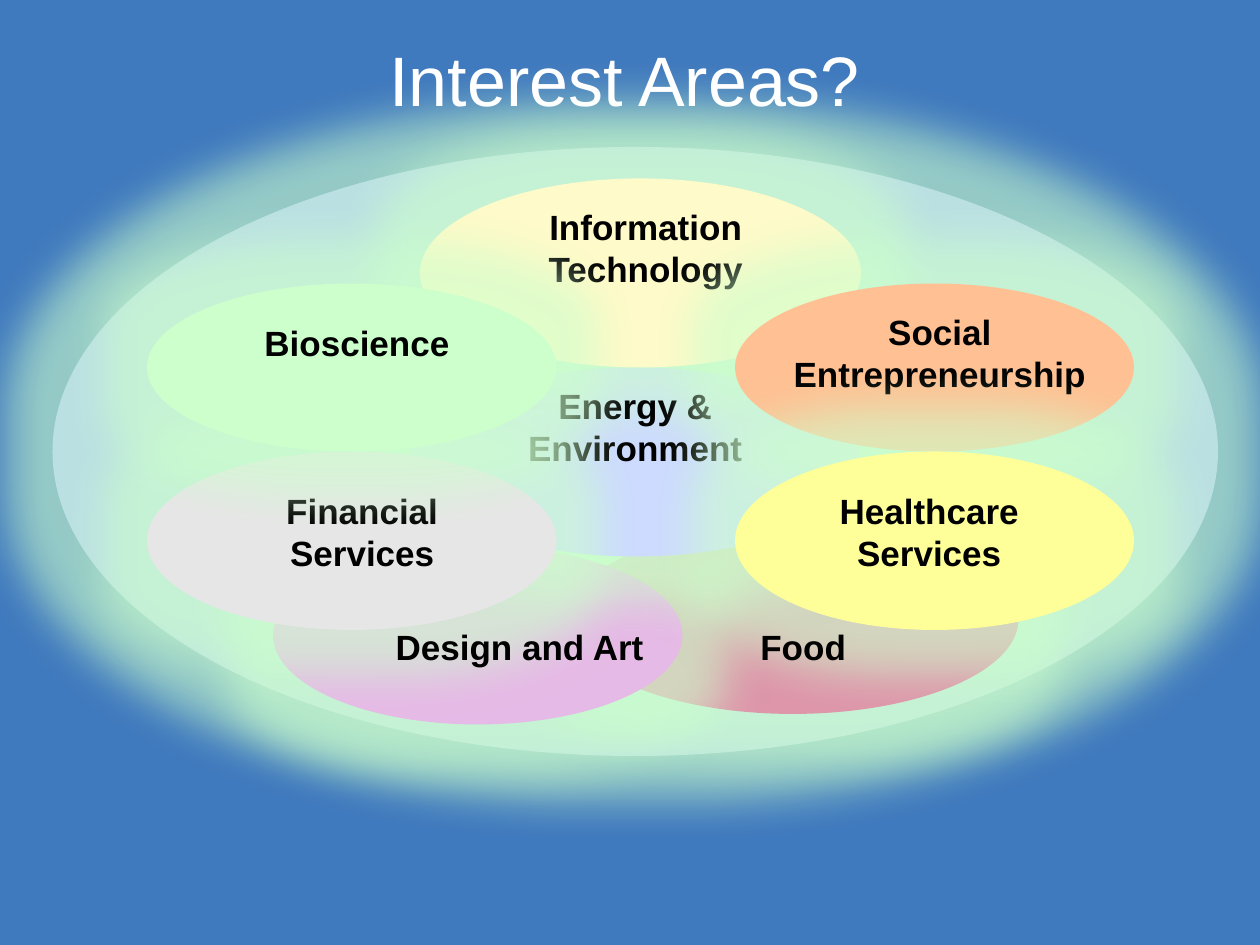
from lxml import etree
from pptx import Presentation, util as u
from pptx.dml.color import RGBColor
from pptx.enum import shapes, text
from pptx.oxml.ns import qn

COLORS = {
    "background": "407ABE", "glow": "CCFFCC", "title": "FFFFFF", "label": "000000",
    "all": "BBE0E3", "food": "DE96AA", "design": "E6BAE6", "energy": "CCDBFF",
    "it": "FFFAC9", "finance": "E6E6E6", "social": "FFC193", "bio": "CCFFCC",
    "health": "FFFF99",
}
ROWS_BY_LINES = {1: 5.25, 2: 9.25}


class InterestMap:
    """Slide on a 120 x 90 grid, twelve cells to the inch."""
    cell = u.Inches(1) // 12
    font = "Arial"

    def __init__(self, prs):
        self.s = prs.slides.add_slide(prs.slide_layouts[6])
        fill = self.s.background.fill
        fill.solid()
        fill.fore_color.rgb = self.color("background")

    def color(self, name):
        return RGBColor.from_string(COLORS[name])

    def box(self, *cells):
        return [round(n * self.cell) for n in cells]

    def area(self, name, *cells):
        """Borderless ellipse with a soft glow."""
        sp = self.s.shapes.add_shape(shapes.MSO_SHAPE.OVAL, *self.box(*cells))
        sp.fill.solid()
        sp.fill.fore_color.rgb = self.color(name)
        sp.line.fill.background()
        sp.shadow.inherit = False
        effects = sp._element.spPr.find(qn("a:effectLst"))
        glow = etree.SubElement(effects, qn("a:glow"), rad=str(u.Pt(50)))
        clr = etree.SubElement(glow, qn("a:srgbClr"), val=COLORS["glow"])
        etree.SubElement(clr, qn("a:alpha"), val="60000")

    def add_text(self, words, cells, size, color, bold, anchor):
        tf = self.s.shapes.add_textbox(*self.box(*cells)).text_frame
        tf.word_wrap = True
        tf.vertical_anchor = anchor
        p = tf.paragraphs[0]
        p.text = words
        p.alignment = text.PP_ALIGN.CENTER
        p.font.name = self.font
        p.font.size = u.Pt(size)
        p.font.bold = bold
        p.font.color.rgb = self.color(color)

    def title(self, words, *cells):
        self.add_text(words, cells, 40, "title", False, text.MSO_ANCHOR.MIDDLE)

    def label(self, words, left, top, width=29, lines=2):
        cells = (left, top, width, ROWS_BY_LINES[lines])
        self.add_text(words, cells, 20, "label", True, text.MSO_ANCHOR.TOP)


def main():
    prs = Presentation()
    prs.slide_width, prs.slide_height = u.Inches(10), u.Inches(7.5)
    m = InterestMap(prs)

    # Order matters: later glows veil earlier areas and labels
    m.area("all", 5, 14, 111, 58)
    m.area("food", 54, 50, 43, 18)
    m.area("design", 26, 52, 39, 17)
    m.title("Interest Areas?", 5, 0, 109, 15)
    m.area("energy", 39, 35, 43, 18)
    m.area("it", 40, 17, 42, 18)
    m.label("Energy & Environment", 46, 36)
    m.area("finance", 14, 43, 39, 17)
    m.label("Information Technology", 47, 19)
    m.area("social", 70, 27, 38, 16)
    m.label("Social Entrepreneurship", 73, 29, width=33)
    m.label("Financial Services", 20, 46)
    m.area("bio", 14, 27, 39, 16)
    m.label("Bioscience", 18, 30, width=32, lines=1)
    m.area("health", 70, 43, 38, 17)
    m.label("Healthcare Services", 74, 46)
    m.label("Design and Art", 35, 59, lines=1)
    m.label("Food", 62, 59, lines=1)

    prs.save("out.pptx")


if __name__ == "__main__":
    main()
